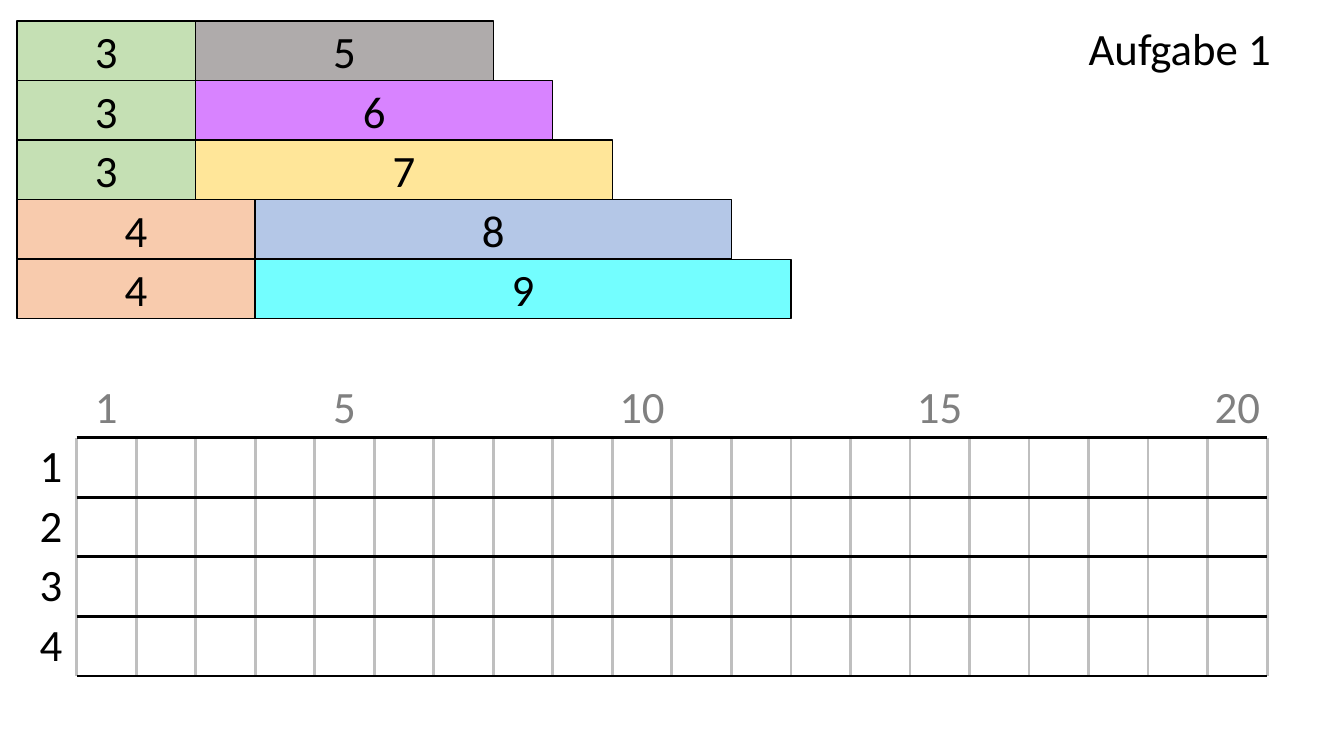
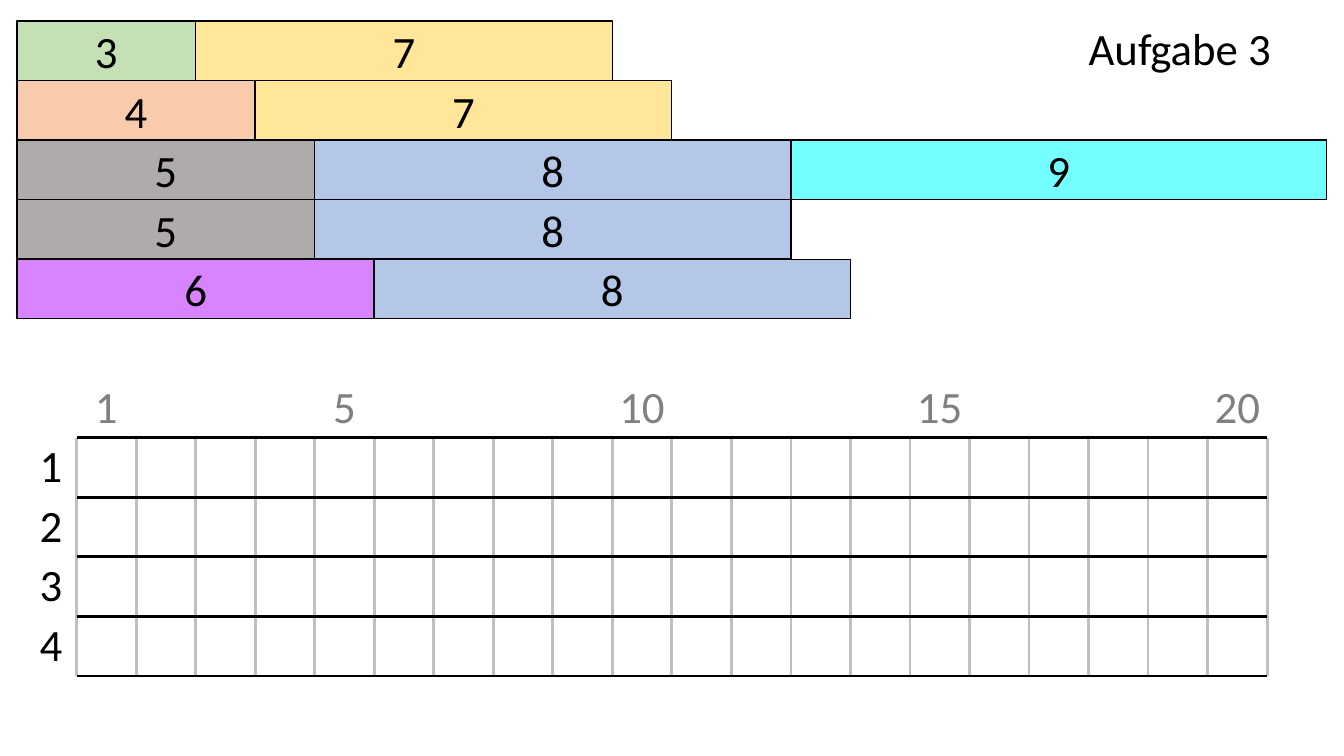
from lxml.etree import SubElement
from pptx import Presentation
from pptx.dml.color import RGBColor as RGB
from pptx.enum.shapes import MSO_CONNECTOR as CONN, MSO_SHAPE as SHAPE
from pptx.enum.text import MSO_ANCHOR as ANCHOR, MSO_AUTO_SIZE as FIT, PP_ALIGN as ALIGN
from pptx.oxml.ns import qn
from pptx.util import Pt

COLORS = {"text": "000000", "label": "808080", "grid": "BFBFBF"}
BARS = {3: "C5E0B4", 4: "F8CBAD", 5: "AFABAB", 6: "D883FF",
        7: "FFE699", 8: "B4C7E7", 9: "73FEFF"}
TASKS = {
    "Aufgabe 1": [(3, 5), (3, 6), (3, 7), (4, 8), (4, 9)],
    "Aufgabe 3": [(3, 7), (4, 7), (5, 8, 9), (5, 8), (6, 8)],
}
CELL, LEFT, TOP = 42.52, 12.2, 15.1
COLS, ROWS = 20, 4
GRID_COL, GRID_ROW = 1, 7


def col_x(col):
    return LEFT + col * CELL


def row_y(row):
    return TOP + row * CELL


class Deck:
    font, size = "Calibri", 32

    def __init__(self):
        self.prs = Presentation()
        self.prs.slide_width, self.prs.slide_height = Pt(960), Pt(540)
        self.s = None

    def slide(self, title):
        self.s = self.prs.slides.add_slide(self.prs.slide_layouts[5])
        sp = self.s.shapes.title
        sp.left, sp.top = Pt(col_x(18)), Pt(row_y(0))
        sp.width, sp.height = Pt(4 * CELL), Pt(CELL)
        self.plain(sp.text_frame)
        self.add_text(sp.text_frame, title, align=ALIGN.LEFT)

    def plain(self, tf):
        tf.margin_left = tf.margin_right = tf.margin_top = tf.margin_bottom = 0
        tf.word_wrap = True
        tf.auto_size = FIT.NONE
        tf.vertical_anchor = ANCHOR.TOP

    def add_text(self, tf, text, color="text", align=ALIGN.CENTER):
        p = tf.paragraphs[0]
        p.alignment = align
        p.line_spacing = 1.0
        r = p.add_run()
        r.text = text
        r.font.name, r.font.size = self.font, Pt(self.size)
        r.font.color.rgb = RGB.from_string(COLORS[color])

    def label(self, x, y, w, text, color="text"):
        tf = self.s.shapes.add_textbox(Pt(x), Pt(y), Pt(w), Pt(CELL)).text_frame
        self.plain(tf)
        self.add_text(tf, text, color)

    def line(self, x1, y1, x2, y2, color):
        ln = self.s.shapes.add_connector(CONN.STRAIGHT, Pt(x1), Pt(y1), Pt(x2), Pt(y2))
        ln.line.width = Pt(2)
        ln.line.color.rgb = RGB.from_string(COLORS[color])
        SubElement(ln._element.spPr, qn("a:effectLst"))

    def bar(self, col, row, length):
        sp = self.s.shapes.add_shape(SHAPE.RECTANGLE, Pt(col_x(col)), Pt(row_y(row)),
                                     Pt(length * CELL), Pt(CELL))
        sp.shadow.inherit = False
        sp.fill.solid()
        sp.fill.fore_color.rgb = RGB.from_string(BARS[length])
        sp.line.width = Pt(1)
        sp.line.color.rgb = RGB.from_string(COLORS["text"])
        sp.text_frame.vertical_anchor = ANCHOR.MIDDLE
        self.add_text(sp.text_frame, str(length))

    def bars(self, rows):
        for row, lengths in enumerate(rows):
            col = 0
            for length in lengths:
                self.bar(col, row, length)
                col += length

    def grid(self):
        x1, x2 = col_x(GRID_COL), col_x(GRID_COL + COLS)
        y1, y2 = row_y(GRID_ROW), row_y(GRID_ROW + ROWS)
        for col in range(COLS + 1):
            x = col_x(GRID_COL + col)
            self.line(x, y2, x, y1, "grid")
        for row in range(ROWS):
            self.label(LEFT + 3, row_y(GRID_ROW + row), CELL, str(row + 1))
        for number in (1, 5, 10, 15, 20):
            self.label(col_x(number - 1), row_y(GRID_ROW - 1), 3 * CELL, str(number), "label")
        for row in range(ROWS + 1):
            y = row_y(GRID_ROW + row)
            self.line(x1, y, x2, y, "text")


def main():
    deck = Deck()
    for title, rows in TASKS.items():
        deck.slide(title)
        deck.grid()
        deck.bars(rows)
    deck.prs.save("out.pptx")


if __name__ == "__main__":
    main()
